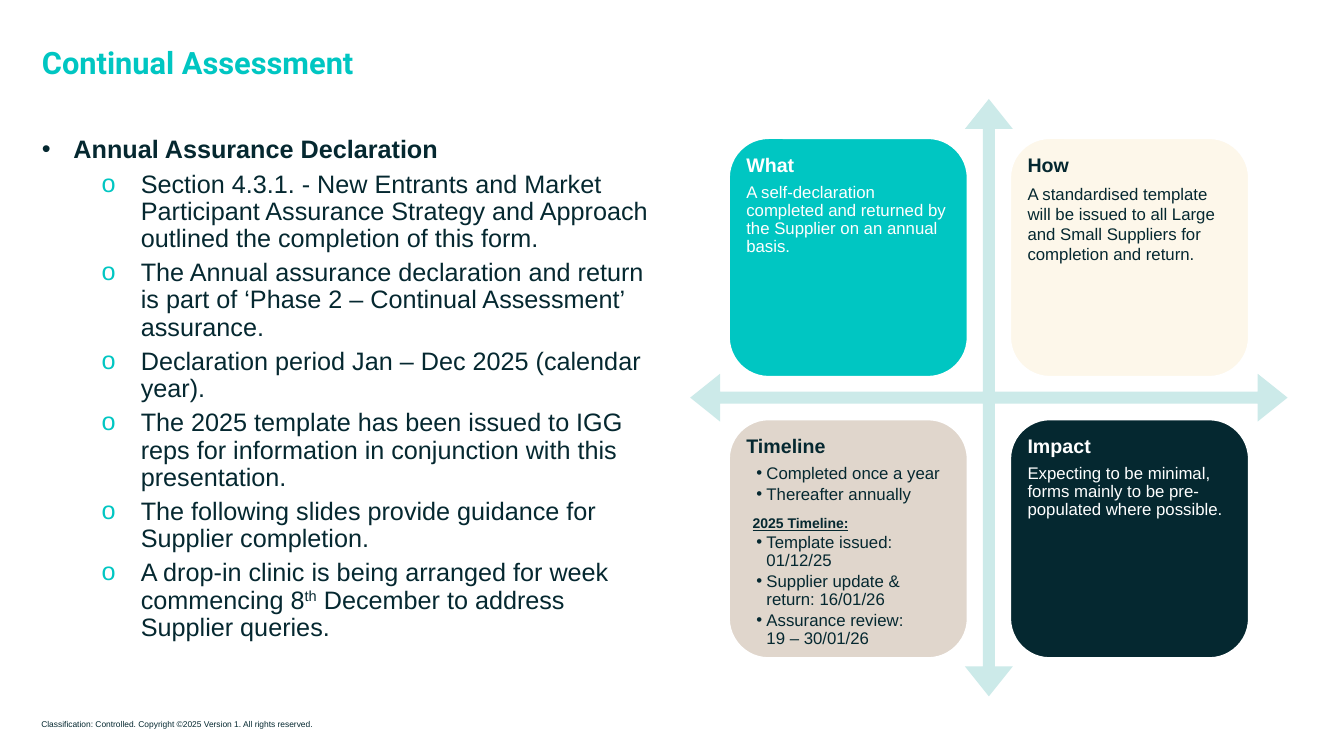
from dataclasses import dataclass

from lxml.etree import SubElement
from pptx import Presentation
from pptx.dml.color import RGBColor
from pptx.enum.shapes import MSO_SHAPE as Form
from pptx.enum.text import MSO_ANCHOR as Anchor, MSO_AUTO_SIZE as Fit, PP_ALIGN as Align
from pptx.oxml.ns import qn
from pptx.shapes.autoshape import Shape
from pptx.slide import Slide
from pptx.text.text import TextFrame, _Paragraph as Para
from pptx.util import Pt

TEAL, DARK, CREAM, SAND, PALE, WHITE = (
    "00C6C2", "052830", "FDF7EA", "E0D6CC", "CCEAE9", "FFFFFF")
SIDE, PITCH = 170.7, 200.9
LEFT, TOP = 520.6, 98.6


@dataclass
class Line:
    text: str
    size: float = 12
    bold: bool = False
    under: bool = False
    mark: str = ""
    tint: str = DARK
    left: float = 0
    hang: float = 0
    before: float = 0
    after: float = 1.8
    space: float = 0.9
    font: str = "Arial"


@dataclass
class Card:
    col: int
    row: int
    fill: str
    ink: str
    head: str
    lines: list[Line]


def color(code: str) -> RGBColor:
    return RGBColor.from_string(code)


def indent(para: Para, line: Line) -> None:
    """Set the hanging indent and the bullet, if any."""
    props = para._p.get_or_add_pPr()
    props.set("marL", str(Pt(line.left)))
    props.set("indent", str(Pt(-line.hang)))
    if line.mark:
        tint = SubElement(props, qn("a:buClr"))
        SubElement(tint, qn("a:srgbClr")).set("val", line.tint)
        SubElement(props, qn("a:buFont")).set("typeface", "Arial")
        SubElement(props, qn("a:buChar")).set("char", line.mark)
    else:
        SubElement(props, qn("a:buNone"))


def write(frame: TextFrame, lines: list[Line], ink: str,
          inset: float = 0, anchor: Anchor = Anchor.TOP) -> None:
    frame.word_wrap = True
    frame.auto_size = Fit.NONE
    frame.vertical_anchor = anchor
    frame.margin_left = frame.margin_right = Pt(inset)
    frame.margin_top = frame.margin_bottom = Pt(inset)
    for i, line in enumerate(lines):
        para = frame.add_paragraph() if i else frame.paragraphs[0]
        para.text = line.text
        indent(para, line)
        para.alignment = Align.LEFT
        para.line_spacing = line.space
        para.space_before = Pt(line.before)
        para.space_after = Pt(line.after)
        font = para.font
        font.name, font.size = line.font, Pt(line.size)
        font.bold, font.underline = line.bold, line.under
        font.color.rgb = color(ink)


def place(shape: Shape, left: float, top: float, width: float, height: float) -> None:
    shape.left, shape.top = Pt(left), Pt(top)
    shape.width, shape.height = Pt(width), Pt(height)


def block(slide: Slide, form: Form, left: float, top: float, side: float, fill: str) -> Shape:
    """Add a plain square shape."""
    shape = slide.shapes.add_shape(form, Pt(left), Pt(top), Pt(side), Pt(side))
    shape.shadow.inherit = False
    shape.fill.solid()
    shape.fill.fore_color.rgb = color(fill)
    shape.line.fill.background()
    return shape


def draw(slide: Slide, card: Card) -> None:
    shape = block(slide, Form.ROUNDED_RECTANGLE, LEFT + card.col * PITCH,
                  TOP + card.row * PITCH, SIDE, card.fill)
    shape.line.color.rgb = color(WHITE)
    shape.line.width = Pt(1.5)
    head = Line(card.head, 14, True, after=4.9)
    write(shape.text_frame, [head, *card.lines], card.ink, 4.2)


def point(text: str) -> Line:
    return Line(text, 18, mark="o", tint=TEAL, left=70.6, hang=28.1, before=5, after=0)


def item(text: str) -> Line:
    return Line(text, mark="•", left=14.4, hang=7.2)


POINTS = [
    Line("Annual Assurance Declaration", 18, True, mark="•", left=22.5, hang=22.5, after=0),
    point("Section 4.3.1. - New Entrants and Market Participant Assurance Strategy "
          "and Approach outlined the completion of this form."),
    point("The Annual assurance declaration and return is part of "
          "‘Phase 2 – Continual Assessment’ assurance."),
    point("Declaration period Jan – Dec 2025 (calendar year)."),
    point("The 2025 template has been issued to IGG reps for information "
          "in conjunction with this presentation."),
    point("The following slides provide guidance for Supplier completion."),
    point("A drop-in clinic is being arranged for week commencing 8"),
]

CARDS = [
    Card(0, 0, TEAL, WHITE, "What", [
        Line("A self-declaration completed and returned by the Supplier on an annual basis.")]),
    Card(1, 0, CREAM, DARK, "How", [
        Line("A standardised template will be issued to all Large and Small Suppliers "
             "for completion and return.", after=0, space=1.0)]),
    Card(0, 1, SAND, DARK, "Timeline", [
        item("Completed once a year"),
        item("Thereafter annually"),
        Line("2025 Timeline:", 10, True, True, left=4.5, before=7.5, after=1.5),
        item("Template issued: 01/12/25"),
        item("Supplier update & return: 16/01/26"),
        item("Assurance review:\v19 – 30/01/26")]),
    Card(1, 1, DARK, WHITE, "Impact", [
        Line("Expecting to be minimal, forms mainly to be pre-populated where possible.")]),
]


def main() -> None:
    deck = Presentation()
    deck.slide_width, deck.slide_height = Pt(960), Pt(540)
    slide = deck.slides.add_slide(deck.slide_layouts[1])

    title, body = slide.placeholders
    place(title, 30, 27.4, 900.7, 37.4)
    write(title.text_frame, [Line("Continual Assessment", 22, True, after=0, font="Roboto")],
          TEAL, anchor=Anchor.MIDDLE)

    place(body, 30, 97.9, 440.6, 422.6)
    write(body.text_frame, POINTS, DARK)
    last = body.text_frame.paragraphs[-1]
    raised = last.add_run()
    raised.text = "th"
    raised._r.get_or_add_rPr().set("baseline", "30000")
    last.add_run().text = " December to address Supplier queries."

    foot = slide.shapes.add_textbox(Pt(29.5), Pt(513.4), Pt(295.9), Pt(7.2))
    note = "Classification: Controlled. Copyright ©2025 Version 1. All rights reserved."
    write(foot.text_frame, [Line(note, 6, after=0, space=1.0)], DARK, anchor=Anchor.BOTTOM)

    cross = block(slide, Form.QUAD_ARROW, 493, 70.7, 426.7, PALE)
    for i, ratio in enumerate((0.02, 0.04, 0.05)):
        cross.adjustments[i] = ratio
    for card in CARDS:
        draw(slide, card)

    deck.save("out.pptx")


if __name__ == "__main__":
    main()
